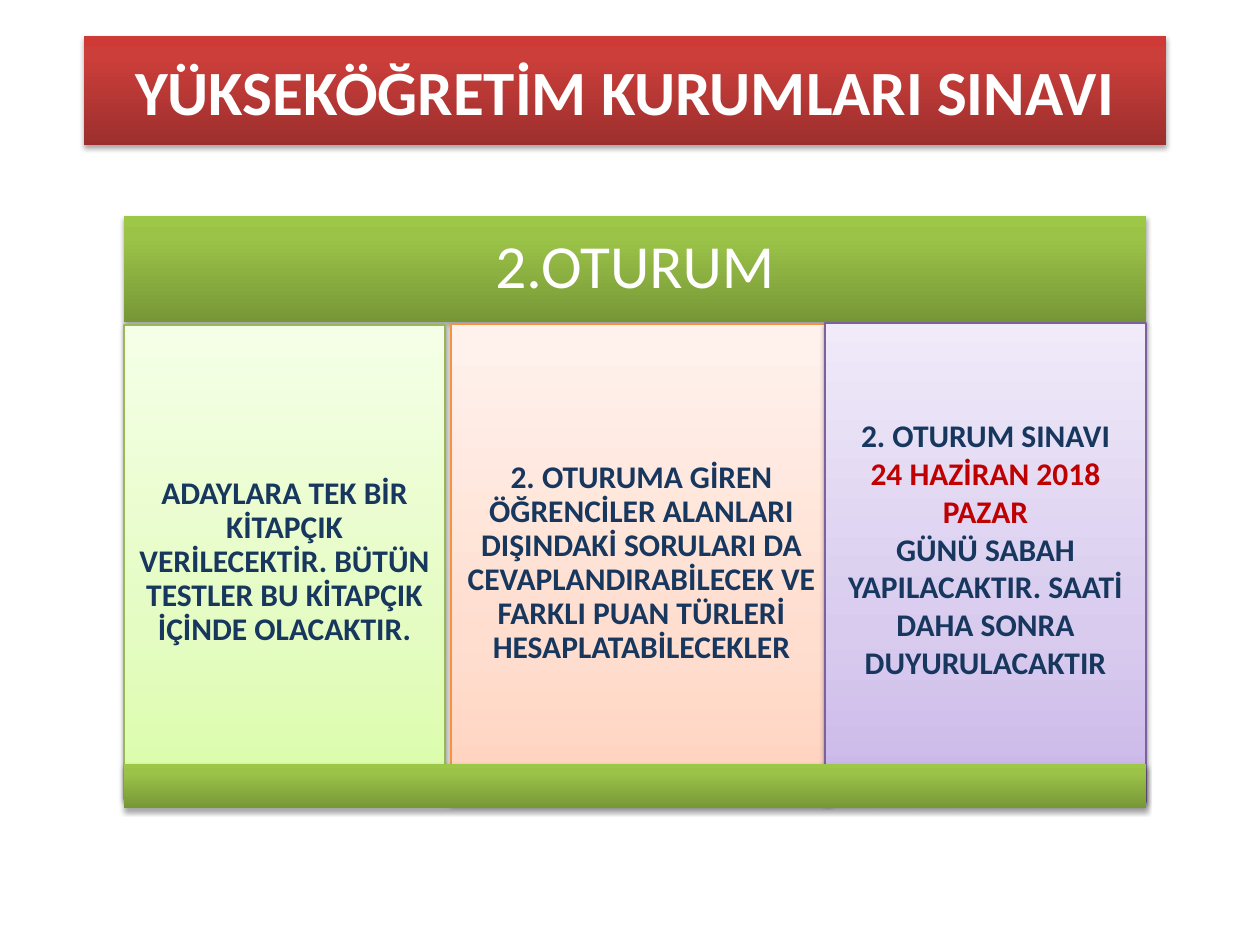
import pptx
import pptx.util
import pptx.dml.color
import pptx.enum.shapes
import pptx.enum.text
import pptx.oxml
import pptx.oxml.ns
from lxml import etree

RGBColor = pptx.dml.color.RGBColor
Pt = pptx.util.Pt
qn = pptx.oxml.ns.qn

WHITE = RGBColor(0xFF, 0xFF, 0xFF)
NAVY = RGBColor(0x17, 0x37, 0x5E)
RED = RGBColor(0xC0, 0x00, 0x00)
GREEN_LINE = RGBColor(0x98, 0xB9, 0x55)
ORANGE_LINE = RGBColor(0xF6, 0x92, 0x40)
PURPLE_LINE = RGBColor(0x7D, 0x60, 0xA0)
BANNER = [(0, RGBColor(0x9C, 0x2F, 0x2D)), (80, RGBColor(0xCB, 0x3E, 0x3A)), (100, RGBColor(0xCE, 0x3B, 0x37))]
BAR = [(0, RGBColor(0x77, 0x97, 0x37)), (80, RGBColor(0x9B, 0xC3, 0x48)), (100, RGBColor(0x9D, 0xC7, 0x46))]
GREEN = [(0, RGBColor(0xDA, 0xFD, 0xA7)), (35, RGBColor(0xE4, 0xFC, 0xC2)), (100, RGBColor(0xF5, 0xFF, 0xE7))]
ORANGE = [(0, RGBColor(0xFF, 0xD2, 0xBD)), (35, RGBColor(0xFF, 0xDE, 0xD0)), (100, RGBColor(0xFF, 0xF2, 0xED))]
PURPLE = [(0, RGBColor(0xC9, 0xB5, 0xE8)), (35, RGBColor(0xD8, 0xCB, 0xEE)), (100, RGBColor(0xF0, 0xEA, 0xF9))]


def px(n):
    return pptx.util.Emu(round(n * 914400 / 126))


def style(sp, box, stops, line, alpha, dist):
    sp.left, sp.top, sp.width, sp.height = [px(n) for n in box]
    sp.fill.gradient()
    sp.fill.gradient_angle = 90
    gs_list = sp.fill._xPr.find(".//" + qn("a:gsLst"))
    for gs in list(gs_list):
        gs_list.remove(gs)
    for pos, color in stops:
        gs = etree.SubElement(gs_list, qn("a:gs"), pos=str(pos * 1000))
        etree.SubElement(gs, qn("a:srgbClr"), val=str(color))
    if line is None:
        sp.line.fill.background()
    else:
        sp.line.color.rgb = line
        sp.line.width = Pt(0.75)
    sp.shadow.inherit = False
    effects = sp._element.spPr.find(qn("a:effectLst"))
    shadow = etree.SubElement(effects, qn("a:outerShdw"), blurRad=str(Pt(3.1)),
                              dist=str(Pt(dist)), dir="5400000", rotWithShape="0")
    black = etree.SubElement(shadow, qn("a:srgbClr"), val="000000")
    etree.SubElement(black, qn("a:alpha"), val=str(alpha * 1000))


def write(sp, paragraphs, size, bold, spacing, inset, bottom):
    tf = sp.text_frame
    tf.word_wrap = True
    tf.auto_size = pptx.enum.text.MSO_AUTO_SIZE.NONE
    tf.vertical_anchor = pptx.enum.text.MSO_ANCHOR.MIDDLE
    tf.margin_left = tf.margin_right = tf.margin_top = px(inset)
    tf.margin_bottom = px(bottom)
    for i, (text, color) in enumerate(paragraphs):
        p = tf.add_paragraph() if i else tf.paragraphs[0]
        p.alignment = pptx.enum.text.PP_ALIGN.CENTER
        p.line_spacing = spacing
        r = p.add_run()
        r.text = text
        r.font.name = "Calibri"
        r.font.size = Pt(size)
        r.font.bold = bold
        r.font.color.rgb = color


prs = pptx.Presentation()
prs.slide_width = px(1260)
prs.slide_height = px(945)
s = prs.slides.add_slide(prs.slide_layouts[5])
RECT = pptx.enum.shapes.MSO_SHAPE.RECTANGLE

title = s.shapes.title
style(title, (84, 36, 1082, 109), BANNER, None, 35, 1.8)
geom = etree.Element(qn("a:prstGeom"), prst="roundRect")
etree.SubElement(geom, qn("a:avLst"))
title._element.spPr.find(qn("a:xfrm")).addnext(geom)
write(title, [("YÜKSEKÖĞRETİM KURUMLARI SINAVI", WHITE)], 36, True, 1, 13, 13)

header = s.shapes.add_shape(RECT, 0, 0, 0, 0)
style(header, (124, 216, 1022, 106), BAR, None, 35, 1.8)
write(header, [("2.OTURUM", WHITE)], 35, False, 0.9, 19, 19)

columns = [
    ((124, 325, 321, 474), GREEN, GREEN_LINE, 0.9, 9, [
        ("ADAYLARA TEK BİR KİTAPÇIK VERİLECEKTİR. BÜTÜN TESTLER BU KİTAPÇIK İÇİNDE OLACAKTIR.", NAVY)]),
    ((451, 324, 381, 478), ORANGE, ORANGE_LINE, 0.9, 9, [
        ("2. OTURUMA GİREN ÖĞRENCİLER ALANLARI DIŞINDAKİ SORULARI DA CEVAPLANDIRABİLECEK "
         "VE FARKLI PUAN TÜRLERİ HESAPLATABİLECEKLER", NAVY)]),
    ((825, 323, 321, 479), PURPLE, PURPLE_LINE, 1, 37, [
        ("2. OTURUM SINAVI", NAVY),
        ("24 HAZİRAN 2018 PAZAR", RED),
        ("GÜNÜ SABAH YAPILACAKTIR. SAATİ DAHA SONRA DUYURULACAKTIR", NAVY)]),
]
for box, stops, line, spacing, bottom, paragraphs in columns:
    sp = s.shapes.add_shape(RECT, 0, 0, 0, 0)
    style(sp, box, stops, line, 38, 1.6)
    write(sp, paragraphs, 18, True, spacing, 9, bottom)

footer = s.shapes.add_shape(RECT, 0, 0, 0, 0)
style(footer, (124, 764, 1022, 44), BAR, None, 35, 1.8)

prs.save("out.pptx")
